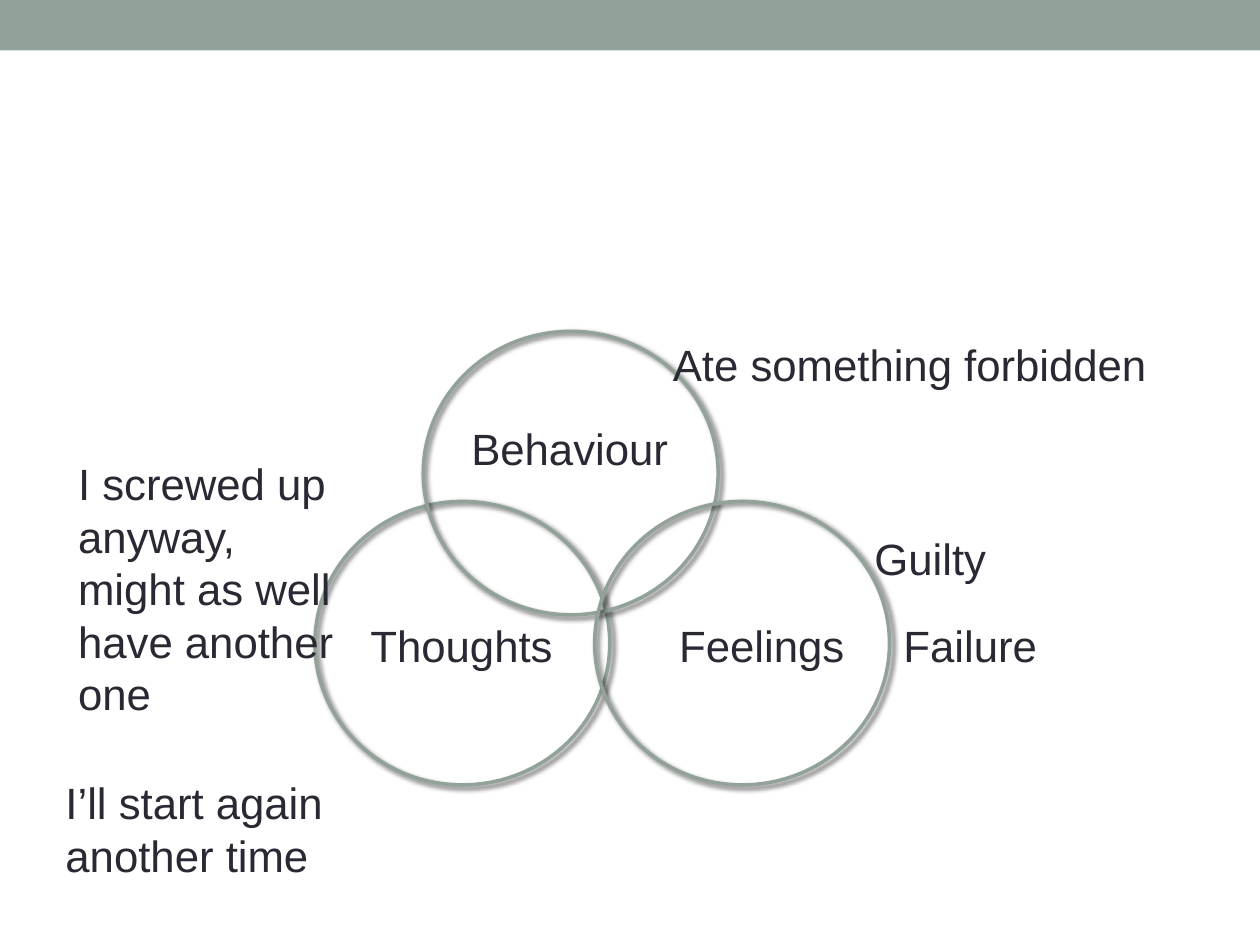
from dataclasses import dataclass

from lxml import etree
from pptx import Presentation
from pptx.dml.color import RGBColor
from pptx.enum.shapes import MSO_SHAPE
from pptx.enum.text import MSO_AUTO_SIZE
from pptx.oxml.ns import qn
from pptx.util import Inches, Pt

RECTANGLE = MSO_SHAPE.RECTANGLE
OVAL = MSO_SHAPE.OVAL
GROW = MSO_AUTO_SIZE.SHAPE_TO_FIT_TEXT
BLANK_LAYOUT = 6


@dataclass(frozen=True)
class Theme:
    accent: RGBColor = RGBColor(0x93, 0xA2, 0x99)
    ink: RGBColor = RGBColor(0x29, 0x29, 0x34)
    shadow: str = "000000"
    font: str = "Arial"
    text_size: float = 25
    ring_width: float = 2.08
    inset: float = 0.05


@dataclass(frozen=True)
class Circle:
    left: float
    top: float


@dataclass(frozen=True)
class Label:
    text: str
    left: float
    top: float
    width: float
    height: float = 0.49
    wrap: bool = False


THEME = Theme()
CIRCLE_WIDTH, CIRCLE_HEIGHT = 2.34, 2.25
LOWER_TOP, LABEL_TOP = 3.98, 4.86

CIRCLES = [
    Circle(2.5, LOWER_TOP),
    Circle(3.36, 2.63),
    Circle(4.72, LOWER_TOP),
]

LABELS = [
    # Names of the three circles
    Label("Behaviour", 3.69, 3.3, 1.68),
    Label("Feelings", 5.34, LABEL_TOP, 1.43),
    Label("Thoughts", 2.89, LABEL_TOP, 1.56),
    # Examples beside them
    Label("Ate something forbidden", 5.29, 2.63, 3.88),
    Label("Guilty", 6.89, 4.17, 1),
    Label("Failure", 7.12, LABEL_TOP, 1.18),
    Label("I screwed up anyway,\nmight as well have another one",
          0.57, 3.58, 2.25, 2.1, wrap=True),
    Label("I’ll start again\nanother time", 0.47, 6.11, 2.16, 0.89),
]


def add_shadow(shape) -> None:
    """Give the shape a soft shadow towards the lower right."""
    effects = etree.SubElement(shape._element.spPr, qn("a:effectLst"))
    shadow = etree.SubElement(
        effects, qn("a:outerShdw"), blurRad=str(Pt(3)), dist=str(Pt(2)),
        dir=str(45 * 60000), rotWithShape="0")
    color = etree.SubElement(shadow, qn("a:srgbClr"), val=THEME.shadow)
    etree.SubElement(color, qn("a:alpha"), val="60000")


def add_band(page, width: float, height: float) -> None:
    band = page.shapes.add_shape(RECTANGLE, 0, 0, Inches(width), Inches(height))
    band.shadow.inherit = False
    band.fill.solid()
    band.fill.fore_color.rgb = THEME.accent
    band.line.fill.background()


def add_circle(page, circle: Circle) -> None:
    ring = page.shapes.add_shape(
        OVAL, Inches(circle.left), Inches(circle.top),
        Inches(CIRCLE_WIDTH), Inches(CIRCLE_HEIGHT))
    ring.fill.background()
    ring.line.color.rgb = THEME.accent
    ring.line.width = Pt(THEME.ring_width)
    add_shadow(ring)


def write_text(frame, text: str, *, size: float, font: str,
               color: RGBColor) -> None:
    para = frame.paragraphs[0]
    para.text = text
    for span in para.runs:
        span.font.size = Pt(size)
        span.font.name = font
        span.font.color.rgb = color


def add_label(page, label: Label) -> None:
    box = page.shapes.add_textbox(
        Inches(label.left), Inches(label.top),
        Inches(label.width), Inches(label.height))
    frame = box.text_frame
    frame.word_wrap = label.wrap
    frame.auto_size = GROW
    frame.margin_left = frame.margin_right = Inches(THEME.inset)
    frame.margin_top = frame.margin_bottom = Inches(THEME.inset)
    write_text(frame, label.text, size=THEME.text_size, font=THEME.font,
               color=THEME.ink)


def main() -> None:
    deck = Presentation()
    deck.slide_width, deck.slide_height = Inches(10), Inches(7.5)
    page = deck.slides.add_slide(deck.slide_layouts[BLANK_LAYOUT])

    # Top band
    add_band(page, 10, 0.4)

    # Overlapping circles, then the words over them
    for circle in CIRCLES:
        add_circle(page, circle)
    for label in LABELS:
        add_label(page, label)

    deck.save("out.pptx")


if __name__ == "__main__":
    main()
